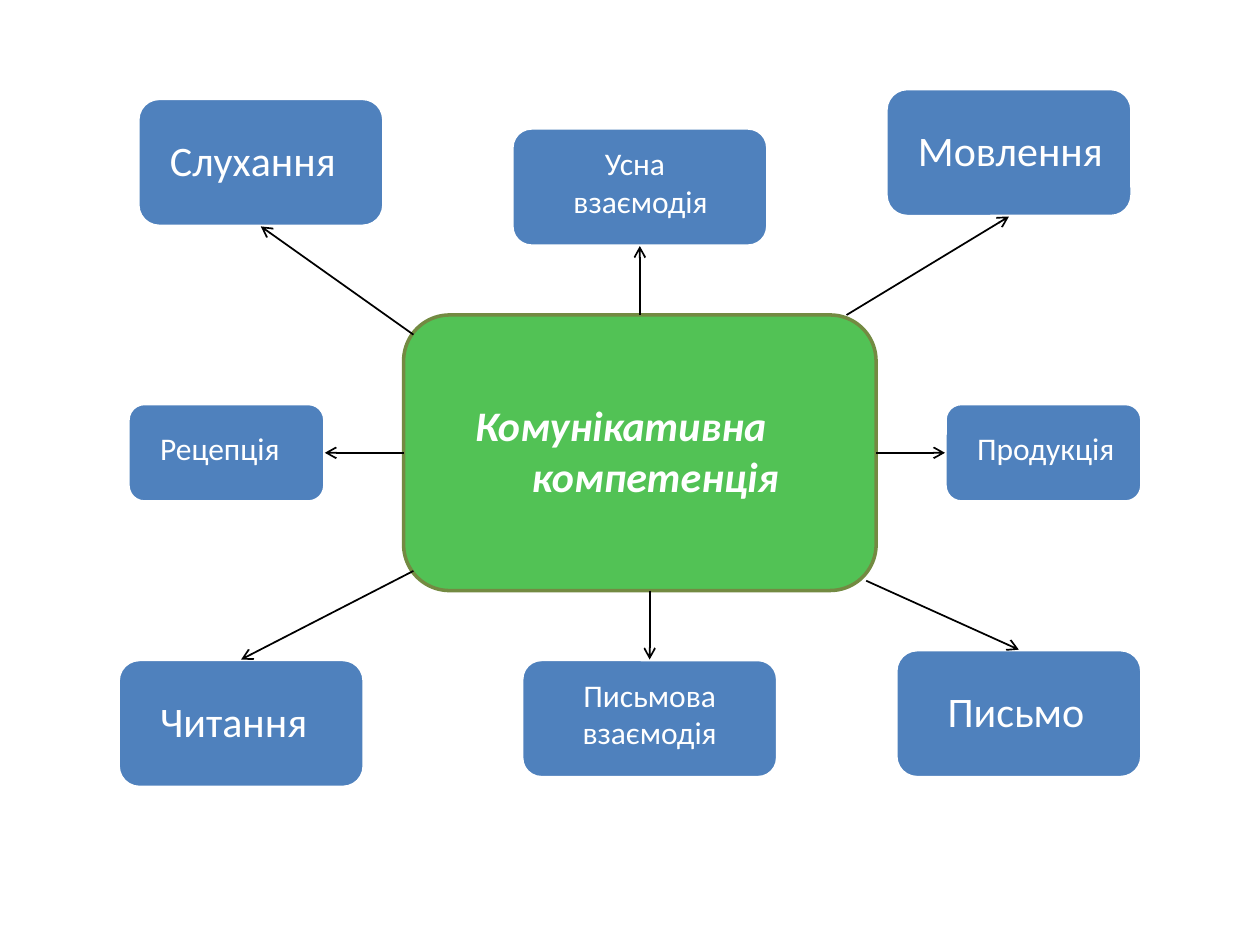
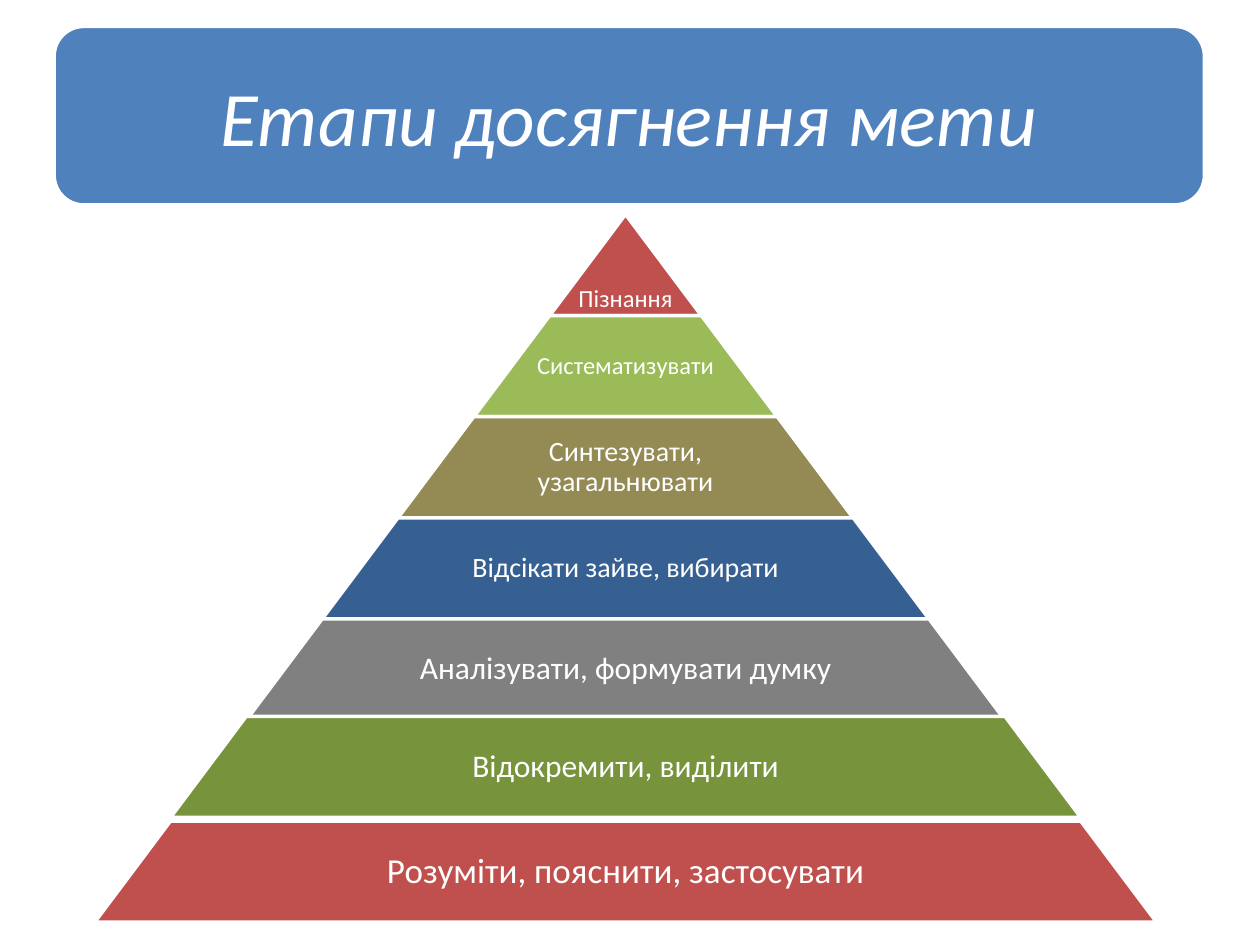
import pptx
import pptx.util
import pptx.dml.color
import pptx.enum.shapes
import pptx.enum.text
import pptx.oxml.ns
import lxml.etree

Inches = pptx.util.Inches
Pt = pptx.util.Pt
Shape = pptx.enum.shapes.MSO_SHAPE
Align = pptx.enum.text.PP_ALIGN
Anchor = pptx.enum.text.MSO_ANCHOR
qn = pptx.oxml.ns.qn

BLUE = "4F81BD"
WHITE = "FFFFFF"
RED = "C0504D"
TOP, LEFT, BOTTOM, RIGHT = range(4)


def paint(shape, fill, line=WHITE):
    shape.shadow.inherit = False
    shape.fill.solid()
    shape.fill.fore_color.rgb = pptx.dml.color.RGBColor.from_string(fill)
    shape.line.color.rgb = pptx.dml.color.RGBColor.from_string(line)
    shape.line.width = Pt(2)


def write(shape, text, size, align=Align.LEFT, anchor=Anchor.TOP, inset=None,
          bold=False, italic=False, spacing=None, indents=(0,)):
    frame = shape.text_frame
    frame.word_wrap = True
    frame.vertical_anchor = anchor
    if inset is not None:
        frame.margin_left = frame.margin_right = Inches(inset)
        frame.margin_top = frame.margin_bottom = Inches(inset)
    frame.text = text
    for paragraph, indent in zip(frame.paragraphs, indents):
        if indent:
            paragraph._p.get_or_add_pPr().set("indent", str(Inches(indent)))
        paragraph.alignment = align
        paragraph.line_spacing = spacing
        paragraph.font.name = "Calibri"
        paragraph.font.size = Pt(size)
        paragraph.font.bold = bold
        paragraph.font.italic = italic
        paragraph.font.color.rgb = pptx.dml.color.RGBColor.from_string(WHITE)


presentation = pptx.Presentation()
presentation.slide_width = Inches(10)
presentation.slide_height = Inches(7.5)
width, height = presentation.slide_width, presentation.slide_height
column, row = width / 128, height / 96
blank = presentation.slide_layouts[6]

shapes = presentation.slides.add_slide(blank).shapes
competence = shapes.add_shape(Shape.ROUNDED_RECTANGLE, int(41 * column), int(32 * row),
                              int(48 * column), int(28 * row))
paint(competence, "52C255", "738A42")
label = shapes.add_textbox(int(47 * column), int(36 * row), int(36 * column), int(15.5 * row))
write(label, "Комунікативна\nкомпетенція", 24, anchor=Anchor.BOTTOM,
      bold=True, italic=True, indents=(0, 0.45))

skills = [
    ("Усна взаємодія", 18, (52, 13, 26, 12), (57, 14, 18, 9), TOP, BOTTOM, Align.LEFT, 0.25),
    ("Письмова взаємодія", 18, (53, 67, 26, 12), (55, 68, 22, 9), (66, 60), TOP, Align.CENTER, 0),
    ("Рецепція", 18, (13, 41, 20, 10), (15, 43, 16, 5), LEFT, RIGHT, Align.LEFT, 0),
    ("Слухання", 24, (14, 10, 25, 13), (16, 13, 20, 6.5), (42, 34), BOTTOM, Align.LEFT, 0),
    ("Читання", 24, (12, 67, 25, 13), (15, 70, 20, 6.5), (42, 58), TOP, Align.LEFT, 0),
    ("Письмо", 24, (91, 66, 25, 13), (95, 69, 22, 6.5), (88, 59), TOP, Align.LEFT, 0),
    ("Мовлення", 24, (90, 9, 25, 13), (92, 12, 22, 6.5), (86, 32), BOTTOM, Align.LEFT, 0),
    ("Продукція", 18, (96, 41, 20, 10), (98, 43, 17, 5), RIGHT, LEFT, Align.LEFT, 0),
]
grid = (column, row, column, row)
for text, size, box_cells, label_cells, start, end_side, align, indent in skills:
    box = shapes.add_shape(Shape.ROUNDED_RECTANGLE,
                           *(int(cells * unit) for cells, unit in zip(box_cells, grid)))
    paint(box, BLUE)
    label = shapes.add_textbox(*(int(cells * unit) for cells, unit in zip(label_cells, grid)))
    write(label, text, size, align=align, indents=(indent,))

    start_column, start_row = start if isinstance(start, tuple) else (0, 0)
    arrow = shapes.add_connector(pptx.enum.shapes.MSO_CONNECTOR.STRAIGHT,
                                 int(start_column * column), int(start_row * row), 0, 0)
    if not isinstance(start, tuple):
        arrow.begin_connect(competence, start)
    arrow.end_connect(box, end_side)
    arrow.line.color.rgb = pptx.dml.color.RGBColor.from_string("000000")
    arrow.line.width = Pt(1)
    lxml.etree.SubElement(arrow.line._get_or_add_ln(), qn("a:tailEnd"), type="arrow")
    lxml.etree.SubElement(arrow._element.spPr, qn("a:effectLst"))

shapes = presentation.slides.add_slide(blank).shapes
levels = [
    ("Пізнання", 14, RED),
    ("Систематизувати", 14, "9BBB59"),
    ("Синтезувати, узагальнювати", 16, "948A54"),
    ("Відсікати зайве, вибирати", 16, "376092"),
    ("Аналізувати, формувати думку", 18, "808080"),
    ("Відокремити, виділити", 18, "77933C"),
    ("Розуміти, пояснити, застосувати", 20, RED),
]
center = 0.4965 * width
level_height = 0.107 * height
for index, (text, size, color) in enumerate(levels):
    level_width = 0.1204 * width * (index + 1)
    top = 0.227 * height + index * level_height
    if index == 5:
        top -= 0.004 * height
    level = shapes.add_shape(Shape.TRAPEZOID, int(center - level_width / 2), int(top),
                             int(level_width), int(level_height))
    level.adjustments[0] = 0.749
    paint(level, color)
    label_width = level_width * (0.65 if index else 1)
    label = shapes.add_textbox(int(center - label_width / 2), int(top),
                               int(label_width), int(level_height))
    write(label, text, size, align=Align.CENTER, inset=0.02, spacing=0.9,
          anchor=Anchor.MIDDLE if index else Anchor.BOTTOM)

title = shapes.add_shape(Shape.ROUNDED_RECTANGLE, int(0.043 * width), int(0.028 * height),
                         int(0.913 * width), int(0.189 * height))
paint(title, BLUE)
write(title, "Етапи досягнення мети", 44, align=Align.CENTER, anchor=Anchor.MIDDLE, italic=True)

presentation.save("out.pptx")
